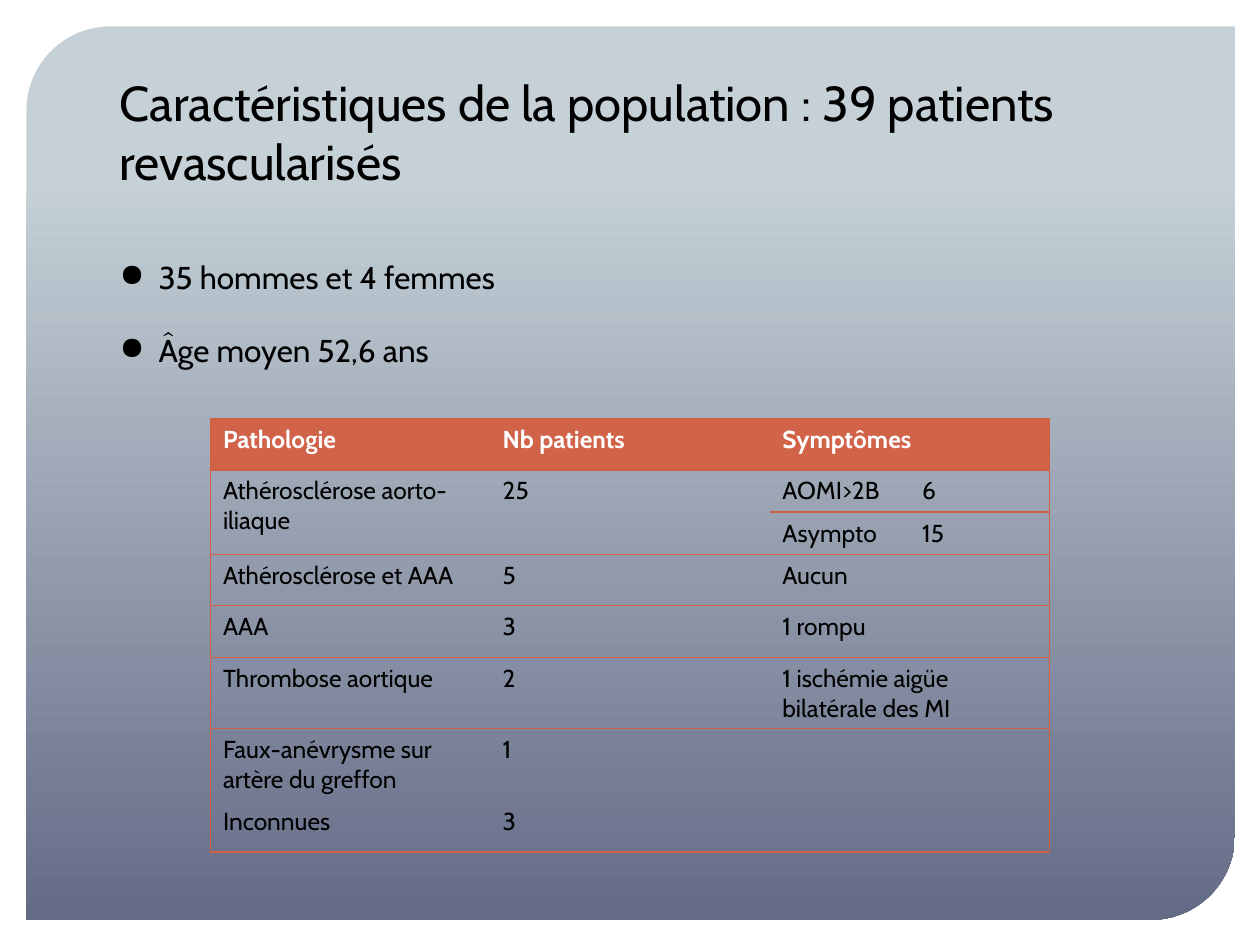
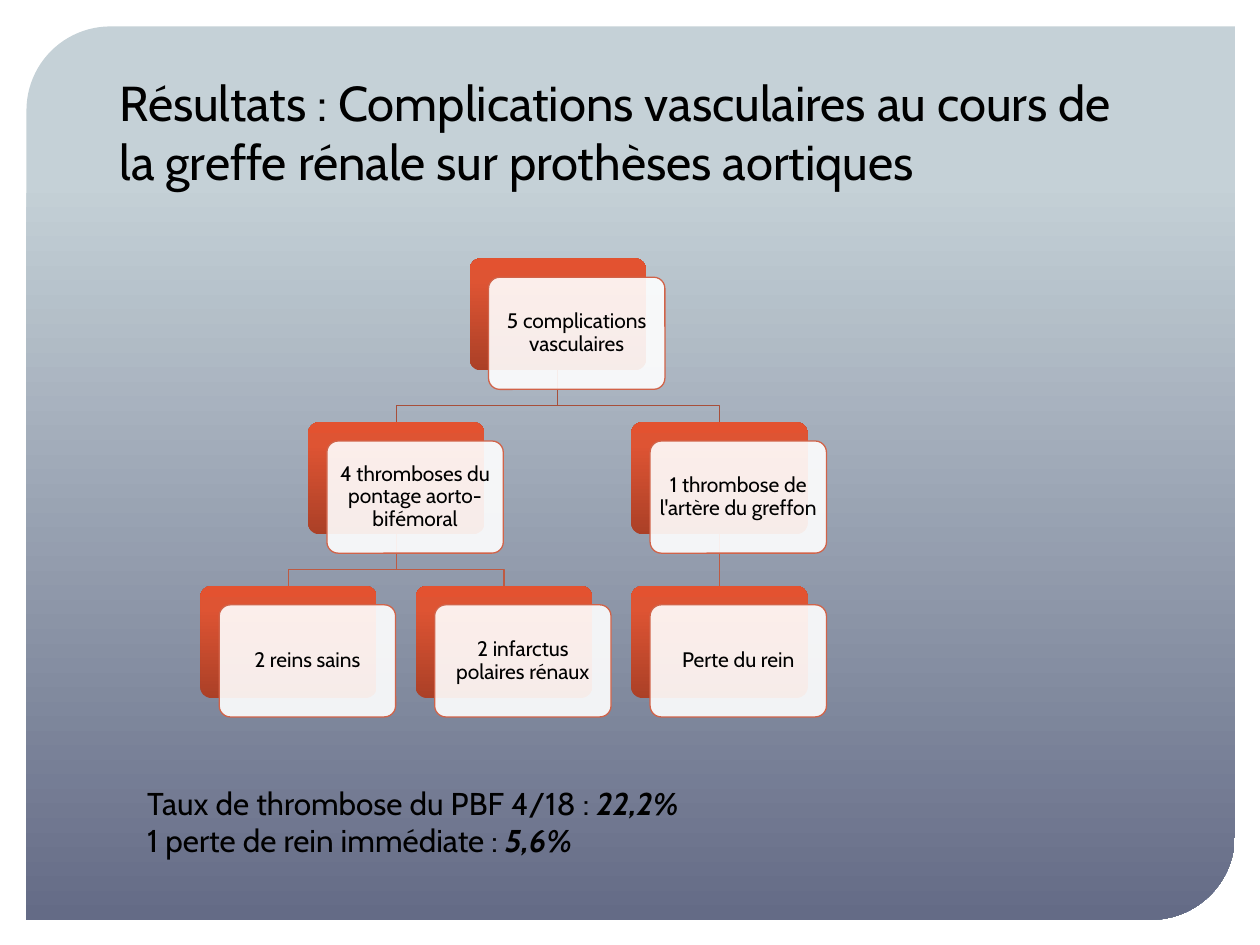
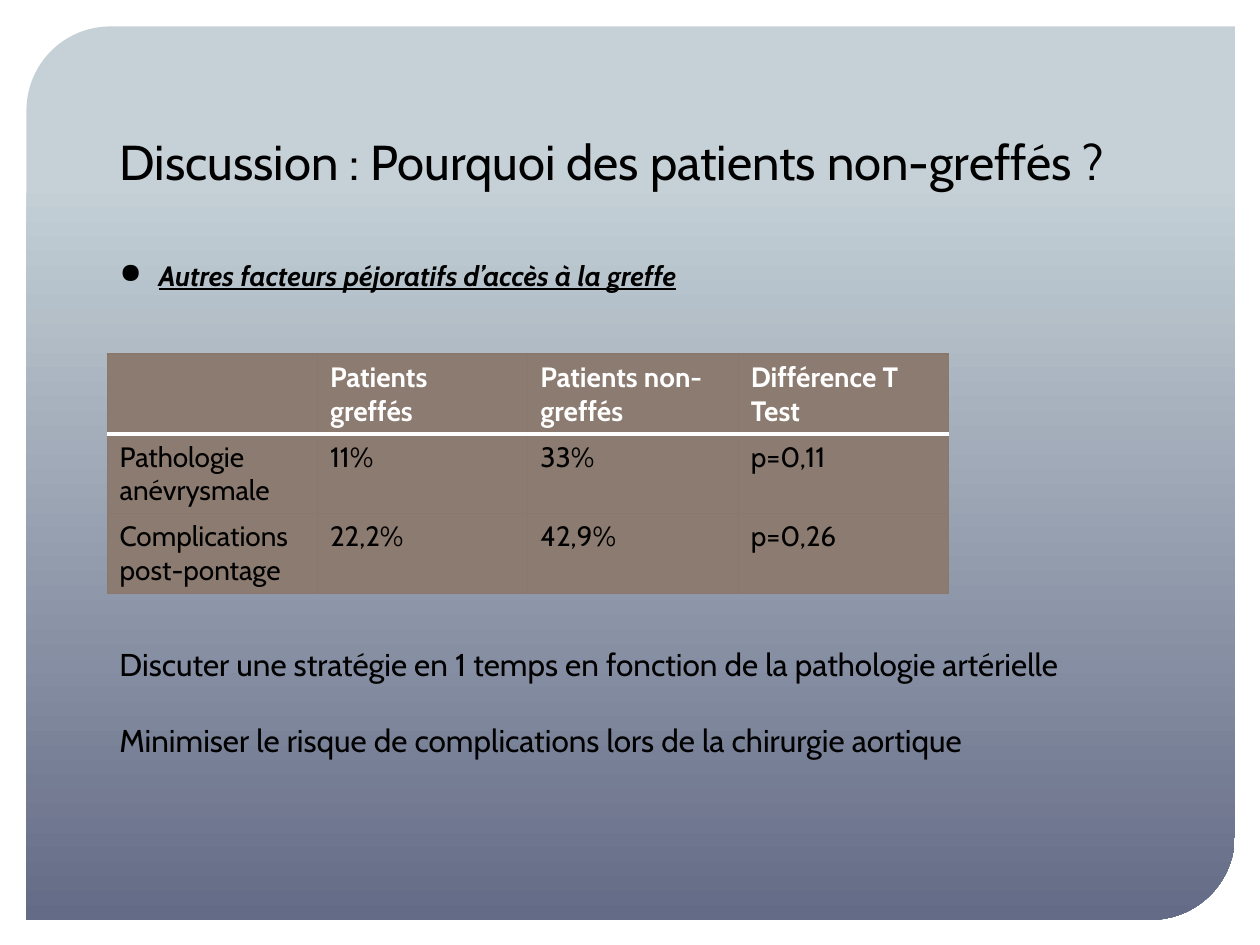
import pptx
import pptx.dml.color
import pptx.enum.shapes
import pptx.enum.text
import pptx.oxml
import pptx.oxml.ns
import pptx.util
from lxml import etree

Inches = pptx.util.Inches
Pt = pptx.util.Pt
qn = pptx.oxml.ns.qn
SHAPE = pptx.enum.shapes.MSO_SHAPE
ANCHOR = pptx.enum.text.MSO_ANCHOR
ALIGN = pptx.enum.text.PP_ALIGN

FONT = "Cabin"
COLORS = {
    "text": "000000",
    "white": "FFFFFF",
    "sky": "C5D1D7",
    "slate": "646B86",
    "orange": "D16349",
    "table_line": "D05F44",
    "upper_link": "A74F3A",
    "lower_link": "BE5A42",
    "card_dark": "AB4027",
    "card_mid": "DE5433",
    "card_light": "E35230",
    "brown": "8C7B70",
    "brown_line": "8A786D",
}

POPULATION = {
    "title": "Caractéristiques de la population : 39 patients revascularisés",
    "bullets": ["35 hommes et 4 femmes", "Âge moyen 52,6 ans"],
    "rows": [
        ["Pathologie", "Nb patients", "Symptômes", None],
        ["Athérosclérose aorto-iliaque", "25", "AOMI>2B", "6"],
        [None, None, "Asympto", "15"],
        ["Athérosclérose et AAA", "5", "Aucun", None],
        ["AAA", "3", "1 rompu", None],
        ["Thrombose aortique", "2", "1 ischémie aigüe bilatérale des MI", None],
        ["Faux-anévrysme sur artère du greffon", "1", "", None],
        ["Inconnues", "3", "", None],
    ],
}
RESULTS = {
    "title": "Résultats : Complications vasculaires au cours de la greffe rénale sur prothèses aortiques",
    "tree": ("5 complications vasculaires", [
        ("4 thromboses du pontage aorto-bifémoral", [
            ("2 reins sains", []),
            ("2 infarctus polaires rénaux", []),
        ]),
        ("1 thrombose de l'artère du greffon", [("Perte du rein", [])]),
    ]),
    "rates": [("Taux de thrombose du PBF 4/18 : ", "22,2%"),
              ("1 perte de rein immédiate : ", "5,6%")],
}
DISCUSSION = {
    "title": "Discussion : Pourquoi des patients non-greffés ?",
    "bullets": ["Autres facteurs péjoratifs d’accès à la greffe"],
    "rows": [
        ["", "Patients greffés", "Patients non-greffés", "Différence T Test"],
        ["Pathologie anévrysmale", "11%", "33%", "p=0,11"],
        ["Complications post-pontage", "22,2%", "42,9%", "p=0,26"],
    ],
    "conclusions": [
        "Discuter une stratégie en 1 temps en fonction de la pathologie artérielle",
        "Minimiser le risque de complications lors de la chirurgie aortique",
    ],
}

THIN_ORANGE = ("table_line", 0.75)
THIN_BROWN = ("brown_line", 0.75)
POPULATION_STYLE = {
    "size": 14, "header": "orange", "body": None,
    "horizontals": {edge: THIN_ORANGE for edge in range(9) if edge != 7},
    "verticals": {0: THIN_ORANGE, 4: THIN_ORANGE},
}
POPULATION_MERGES = [(1, 0, 2, 0), (1, 1, 2, 1)] + [(row, 2, row, 3) for row in (0, 3, 4, 5, 6, 7)]
DISCUSSION_STYLE = {
    "size": 16, "header": "brown", "body": "brown",
    "horizontals": {0: THIN_BROWN, 1: ("white", 2.5), 2: THIN_BROWN, 3: THIN_BROWN},
    "verticals": {edge: THIN_BROWN for edge in range(5)},
}
NO_GRID_STYLE = "{2D5ABB26-0587-4C30-8999-92F81FD0307C}"

CARD_WIDTH, CARD_HEIGHT, CARD_SHIFT = 1.4, 0.89, 0.15
TREE_LEFT, TREE_TOP = 2.29, 2.05
LEAF_PITCH, LEVEL_PITCH, LINK_DROP = 1.71, 1.3, 0.28


def color(name):
    return pptx.dml.color.RGBColor.from_string(COLORS[name])


def set_font(font, size, name="text", bold=None):
    font.name = FONT
    font.size = Pt(size)
    font.color.rgb = color(name)
    font.bold = bold


def add_plain_shape(page, kind, left, top, width, height, rounding):
    shape = page.shapes.add_shape(kind, Inches(left), Inches(top), Inches(width), Inches(height))
    shape.shadow.inherit = False
    shape.adjustments[0] = rounding
    shape.line.fill.background()
    return shape


def fill_gradient(shape, stops, angle):
    shape.fill.gradient()
    shape.fill.gradient_angle = angle
    stop_list = shape._element.spPr.find(".//" + qn("a:gsLst"))
    for stop in list(stop_list):
        stop_list.remove(stop)
    for position, name in stops:
        stop = etree.SubElement(stop_list, qn("a:gs"), pos=str(position * 1000))
        etree.SubElement(stop, qn("a:srgbClr"), val=COLORS[name])


def add_text_box(page, left, top, width, height):
    box = page.shapes.add_textbox(Inches(left), Inches(top), Inches(width), Inches(height))
    box.text_frame.word_wrap = True
    return box.text_frame


def next_paragraph(frame, index):
    return frame.paragraphs[0] if index == 0 else frame.add_paragraph()


def add_page(deck, title):
    page = deck.slides.add_slide(deck.slide_layouts[6])
    panel = add_plain_shape(page, SHAPE.ROUND_2_DIAG_RECTANGLE, 0.21, 0.21, 9.59, 7.09, 0.094)
    panel.adjustments[1] = 0
    fill_gradient(panel, [(17, "sky"), (100, "slate")], 270)
    frame = add_text_box(page, 0.85, 0.42, 8.29, 1.14)
    frame.vertical_anchor = ANCHOR.BOTTOM
    frame.text = title
    set_font(frame.paragraphs[0].font, 28)
    return page


def add_bullets(page, lines, size, emphasis=None):
    frame = add_text_box(page, 0.85, 2, 8.29, 1.2)
    for index, line in enumerate(lines):
        para = next_paragraph(frame, index)
        para.text = line
        properties = para._p.get_or_add_pPr()
        properties.set("marL", str(Inches(0.31)))
        properties.set("indent", str(-Inches(0.31)))
        etree.SubElement(properties, qn("a:buChar"), char="●")
        if index:
            para.space_before = Pt(20)
        set_font(para.font, size, bold=emphasis)
        para.font.italic = emphasis
        para.font.underline = emphasis


def set_borders(cell, borders):
    properties = cell._tc.get_or_add_tcPr()
    for side in "LRTB":
        border = borders[side]
        line = etree.SubElement(properties, qn("a:ln" + side))
        if border is None:
            line.set("w", "0")
            etree.SubElement(line, qn("a:noFill"))
        else:
            name, width = border
            line.set("w", str(Pt(width)))
            fill = etree.SubElement(line, qn("a:solidFill"))
            etree.SubElement(fill, qn("a:srgbClr"), val=COLORS[name])


def add_grid(page, left, top, widths, heights, rows, style, merges=()):
    frame = page.shapes.add_table(len(heights), len(widths), Inches(left), Inches(top),
                                  Inches(sum(widths)), Inches(sum(heights)))
    table = frame.table
    table.first_row = table.horz_banding = False
    table._tbl.tblPr.find(qn("a:tableStyleId")).text = NO_GRID_STYLE
    for column, width in zip(table.columns, widths):
        column.width = Inches(width)
    for row, height in zip(table.rows, heights):
        row.height = Inches(height)
    for first_row, first_col, last_row, last_col in merges:
        table.cell(first_row, first_col).merge(table.cell(last_row, last_col))
    horizontals, verticals = style["horizontals"], style["verticals"]
    for row, texts in enumerate(rows):
        for col, text in enumerate(texts):
            if text is None:
                continue
            cell = table.cell(row, col)
            tall, wide = (cell.span_height, cell.span_width) if cell.is_merge_origin else (1, 1)
            set_borders(cell, {
                "L": verticals.get(col), "R": verticals.get(col + wide),
                "T": horizontals.get(row), "B": horizontals.get(row + tall),
            })
            fill = style["body"] if row else style["header"]
            if fill:
                cell.fill.solid()
                cell.fill.fore_color.rgb = color(fill)
            else:
                cell.fill.background()
            cell.text = text
            set_font(cell.text_frame.paragraphs[0].font, style["size"],
                     "text" if row else "white", row == 0)


def place_tree(node, level, leaves):
    text, children = node
    placed = [place_tree(child, level + 1, leaves) for child in children]
    if placed:
        center = sum(child["center"] for child in placed) / len(placed)
    else:
        center = TREE_LEFT + LEAF_PITCH * len(leaves)
        leaves.append(text)
    return {"text": text, "center": center, "level": level,
            "top": TREE_TOP + LEVEL_PITCH * level, "children": placed}


def add_link(page, parent, child):
    start_x, end_x = Inches(parent["center"]), Inches(child["center"])
    start_y, end_y = Inches(parent["top"] + CARD_HEIGHT), Inches(child["top"])
    if start_x == end_x:
        link = page.shapes.add_connector(pptx.enum.shapes.MSO_CONNECTOR.STRAIGHT,
                                         start_x, start_y, end_x, end_y)
        etree.SubElement(link._element.spPr, qn("a:effectLst"))
    else:
        bend_y = start_y + Inches(LINK_DROP)
        outline = page.shapes.build_freeform(start_x, start_y)
        outline.add_line_segments([(start_x, bend_y), (end_x, bend_y), (end_x, end_y)], close=False)
        link = outline.convert_to_shape()
        link.shadow.inherit = False
        link.fill.background()
    link.line.color.rgb = color("lower_link" if parent["level"] else "upper_link")
    link.line.width = Pt(0.75)


def add_links(page, node):
    for child in node["children"]:
        add_link(page, node, child)
        add_links(page, child)


def add_cards(page, node):
    left, top = node["center"] - CARD_WIDTH / 2, node["top"]
    back = add_plain_shape(page, SHAPE.ROUNDED_RECTANGLE, left, top, CARD_WIDTH, CARD_HEIGHT, 0.1)
    fill_gradient(back, [(0, "card_dark"), (80, "card_mid"), (100, "card_light")], 90)
    front = add_plain_shape(page, SHAPE.ROUNDED_RECTANGLE, left + CARD_SHIFT, top + CARD_SHIFT,
                            CARD_WIDTH, CARD_HEIGHT, 0.1)
    front.fill.solid()
    front.fill.fore_color.rgb = color("white")
    tint = front._element.spPr.find(qn("a:solidFill")).find(qn("a:srgbClr"))
    etree.SubElement(tint, qn("a:alpha"), val="90000")
    front.line.color.rgb = color("orange")
    front.line.width = Pt(0.75)
    frame = front.text_frame
    frame.word_wrap = True
    frame.vertical_anchor = ANCHOR.MIDDLE
    frame.margin_left = frame.margin_right = frame.margin_top = frame.margin_bottom = Inches(0.04)
    frame.text = node["text"]
    para = frame.paragraphs[0]
    para.alignment = ALIGN.CENTER
    para.line_spacing = 0.9
    set_font(para.font, 12)
    for child in node["children"]:
        add_cards(page, child)


def build_population(deck):
    page = add_page(deck, POPULATION["title"])
    add_bullets(page, POPULATION["bullets"], 18)
    add_grid(page, 1.67, 3.32, [2.22, 2.22, 1.11, 1.11], [0.41, 0.28, 0.28] + [0.41] * 5,
             POPULATION["rows"], POPULATION_STYLE, POPULATION_MERGES)


def build_results(deck):
    page = add_page(deck, RESULTS["title"])
    root = place_tree(RESULTS["tree"], 0, [])
    add_links(page, root)
    add_cards(page, root)
    frame = add_text_box(page, 1.07, 6.17, 4.8, 0.71)
    for index, (label, rate) in enumerate(RESULTS["rates"]):
        para = next_paragraph(frame, index)
        set_font(para.font, 18)
        para.add_run().text = label
        span = para.add_run()
        span.text = rate
        span.font.bold = span.font.italic = True


def build_discussion(deck):
    page = add_page(deck, DISCUSSION["title"])
    add_bullets(page, DISCUSSION["bullets"], 16, True)
    add_grid(page, 0.85, 2.81, [1.67] * 4, [0.41] * 3, DISCUSSION["rows"], DISCUSSION_STYLE)
    frame = add_text_box(page, 0.85, 5.07, 8.44, 1.01)
    for index, line in enumerate(DISCUSSION["conclusions"]):
        para = next_paragraph(frame, index)
        para.text = line
        if index:
            para.space_before = Pt(22)
        set_font(para.font, 18)


def main():
    deck = pptx.Presentation()
    deck.slide_width, deck.slide_height = Inches(10), Inches(7.5)
    build_population(deck)
    build_results(deck)
    build_discussion(deck)
    deck.save("out.pptx")


if __name__ == "__main__":
    main()
